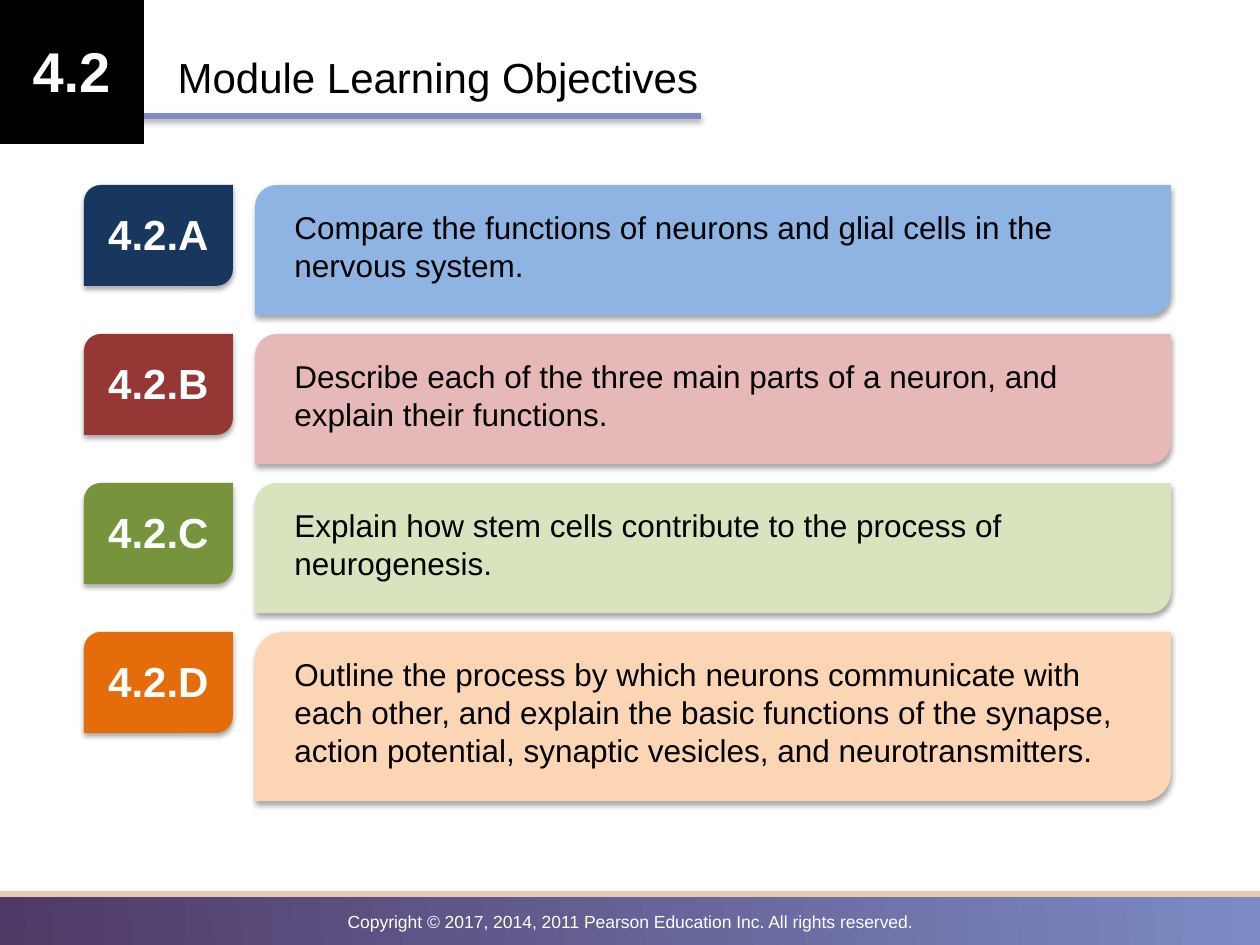
from lxml.etree import SubElement
from pptx import Presentation
from pptx.dml.color import RGBColor
from pptx.enum.shapes import MSO_SHAPE
from pptx.enum.text import MSO_ANCHOR, PP_ALIGN
from pptx.oxml.ns import qn
from pptx.util import Emu, Pt

SCALE = 914400 / 126  # EMU per px
FONT = "Arial"

COLORS = {
    "black": "000000",
    "white": "FFFFFF",
    "purple": "4F3967",
    "periwinkle": "7C8BC4",
    "sand": "E7C8B3",
}

# Label, badge colour, card colour, card height, text height, objective
OBJECTIVES = [
    ("4.2.A", "17375E", "8EB4E3", 130, 90,
     "Compare the functions of neurons and glial cells in the nervous system."),
    ("4.2.B", "953735", "E6B9B8", 130, 90,
     "Describe each of the three main parts of a neuron, and explain their functions."),
    ("4.2.C", "77933C", "D7E4BD", 130, 90,
     "Explain how stem cells contribute to the process of neurogenesis."),
    ("4.2.D", "E46C0A", "FCD5B5", 169, 127,
     "Outline the process by which neurons communicate with each other, and explain "
     "the basic functions of the synapse, action potential, synaptic vesicles, and "
     "neurotransmitters."),
]
FIRST_TOP = 185
ROW_STEP = 149
TEXT_DROP = 17


def px(length):
    return Emu(round(length * SCALE))


def rgb(value):
    return RGBColor.from_string(COLORS.get(value, value))


def add_shadow(shape):
    effects = shape._element.spPr.find(qn("a:effectLst"))
    shadow = SubElement(effects, qn("a:outerShdw"), blurRad="40000", dist="23000",
                        dir="5400000", rotWithShape="0")
    color = SubElement(shadow, qn("a:srgbClr"), val=COLORS["black"])
    SubElement(color, qn("a:alpha"), val="35000")


def add_block(page, left, top, width, height, color,
              kind=MSO_SHAPE.RECTANGLE, shadow=False):
    block = page.shapes.add_shape(kind, px(left), px(top), px(width), px(height))
    block.fill.solid()
    block.fill.fore_color.rgb = rgb(color)
    block.line.fill.background()
    block.shadow.inherit = False
    if shadow:
        add_shadow(block)
    return block


def write_text(box, text, size=18, color="black", bold=False, align=PP_ALIGN.LEFT):
    frame = box.text_frame
    frame.word_wrap = True
    frame.vertical_anchor = MSO_ANCHOR.TOP
    para = frame.paragraphs[0]
    para.alignment = align
    span = para.add_run()
    span.text = text
    span.font.name = FONT
    span.font.size = Pt(size)
    span.font.bold = bold
    span.font.color.rgb = rgb(color)


def add_text(page, left, top, width, height, text, **style):
    box = page.shapes.add_textbox(px(left), px(top), px(width), px(height))
    write_text(box, text, **style)


def add_footer(page):
    band = add_block(page, 0, 892, 1260, 57, "purple")
    band.fill.gradient()
    band.fill.gradient_angle = 4
    for stop, color in zip(band.fill.gradient_stops, ("purple", "periwinkle")):
        stop.color.rgb = rgb(color)
    add_block(page, 0, 891, 1266, 6, "sand")
    add_text(page, 0, 905, 1260, 34,
             "Copyright © 2017, 2014, 2011 Pearson Education Inc. All rights reserved.",
             size=10, color="white", align=PP_ALIGN.CENTER)


def add_header(page):
    add_block(page, -25, 113, 726, 6, "periwinkle", shadow=True)
    add_block(page, -1, -1, 145, 145, "black")
    add_text(page, -1, 30, 145, 81, "4.2",
             size=32, color="white", bold=True, align=PP_ALIGN.CENTER)
    title = page.shapes.title
    title.left, title.top, title.width, title.height = map(px, (165, 45, 971, 63))
    write_text(title, "Module Learning Objectives", size=24)


def add_objective(page, top, label, badge_color, card_color,
                  card_height, text_height, text):
    rounded = MSO_SHAPE.ROUND_2_DIAG_RECTANGLE
    add_block(page, 84, top, 149, 101, badge_color, kind=rounded, shadow=True)
    add_text(page, 84, top + TEXT_DROP, 149, 63, label,
             size=24, color="white", bold=True, align=PP_ALIGN.CENTER)
    add_block(page, 255, top, 916, card_height, card_color, kind=rounded, shadow=True)
    add_text(page, 282, top + TEXT_DROP, 881, text_height, text)


def main():
    deck = Presentation()
    deck.slide_width, deck.slide_height = px(1260), px(945)
    page = deck.slides.add_slide(deck.slide_layouts[5])  # title only

    add_footer(page)
    add_header(page)
    for row, objective in enumerate(OBJECTIVES):
        add_objective(page, FIRST_TOP + row * ROW_STEP, *objective)

    deck.save("out.pptx")


if __name__ == "__main__":
    main()
